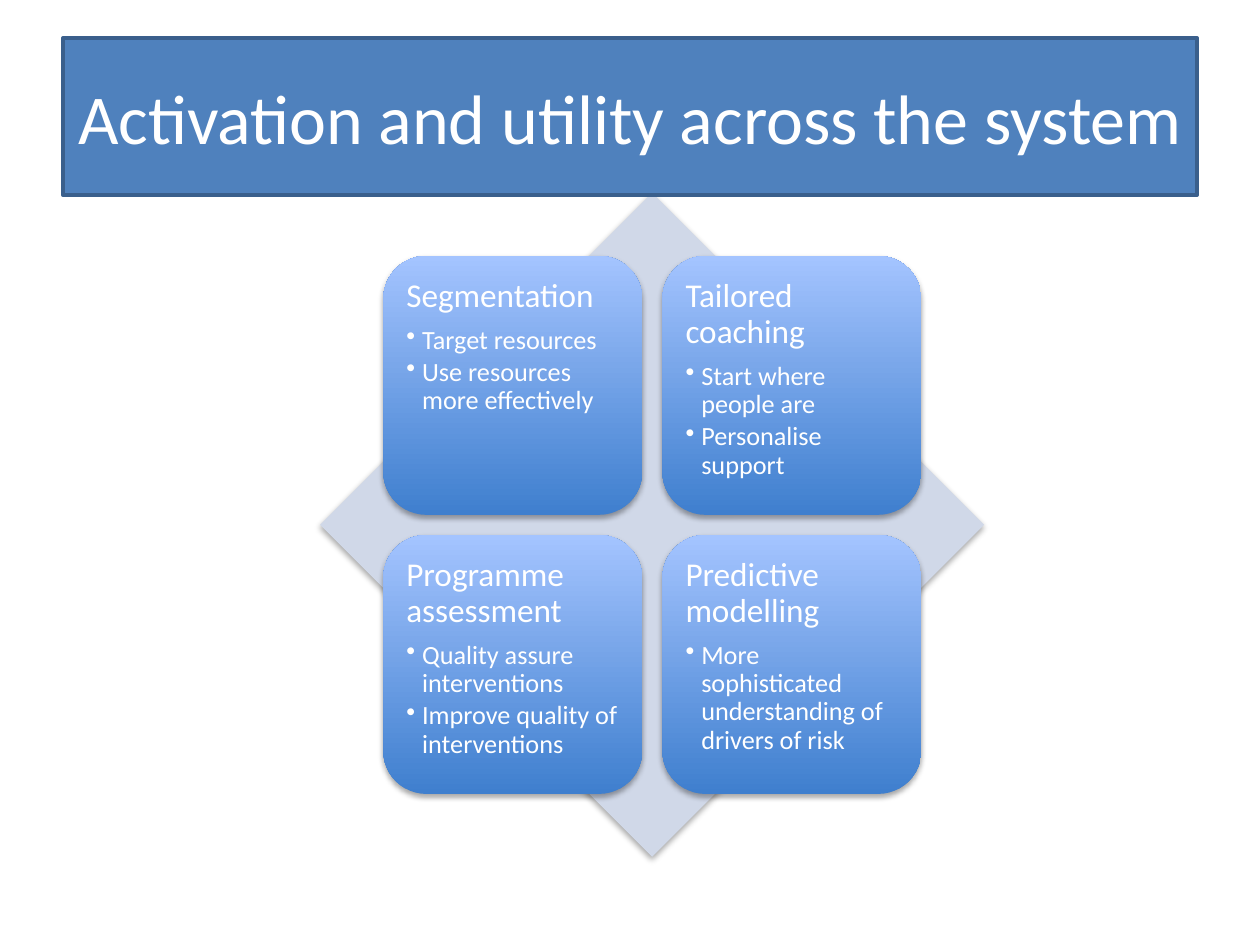
from lxml.etree import SubElement
from pptx import Presentation
from pptx.dml.color import RGBColor
from pptx.enum.shapes import MSO_SHAPE as Preset
from pptx.enum.text import MSO_ANCHOR as Anchor, PP_ALIGN as Align
from pptx.oxml.ns import qn
from pptx.util import Pt


def color(hex_text):
    return RGBColor.from_string(hex_text)


def add_text(paragraph, text, size=15, font="Calibri", ink="FFFFFF",
             align=Align.LEFT, line=None, after=0, bullet=False):
    paragraph.alignment = align
    paragraph.line_spacing = line
    paragraph.space_after = Pt(after)
    run = paragraph.add_run()
    run.text = text
    run.font.size = Pt(size)
    run.font.name = font
    run.font.color.rgb = color(ink)
    if bullet:
        paragraph.level = 1
        properties = paragraph._p.get_or_add_pPr()
        properties.set("marL", str(Pt(9)))
        properties.set("indent", str(-Pt(9)))
        SubElement(properties, qn("a:buChar"), char="•")


class SlideBuilder:
    banner_fill, banner_line = "4F81BD", "3A5F8C"
    diamond_fill = "D0D8E8"
    card_bottom, card_top = "3F7FCE", "A4C4FF"

    def __init__(self, slide):
        self.slide = slide

    def shape(self, preset, left, top, width, height):
        shape = self.slide.shapes.add_shape(
            preset, Pt(left), Pt(top), Pt(width), Pt(height))
        shape.shadow.inherit = False
        shape.line.fill.background()
        return shape

    def soft_shadow(self, shape):
        effects = shape._element.spPr.find(qn("a:effectLst"))
        shadow = SubElement(
            effects, qn("a:outerShdw"), blurRad=str(Pt(3.1)),
            dist=str(Pt(1.8)), dir="5400000", rotWithShape="0")
        shade = SubElement(shadow, qn("a:srgbClr"), val="000000")
        SubElement(shade, qn("a:alpha"), val="35000")

    def diamond(self, left, top, size):
        shape = self.shape(Preset.DIAMOND, left, top, size, size)
        shape.fill.solid()
        shape.fill.fore_color.rgb = color(self.diamond_fill)
        self.soft_shadow(shape)

    def card(self, left, top, size, heading, points):
        shape = self.shape(Preset.ROUNDED_RECTANGLE, left, top, size, size)
        shape.fill.gradient()
        shape.fill.gradient_angle = 90
        for stop, shade in zip(shape.fill.gradient_stops,
                               (self.card_bottom, self.card_top)):
            stop.color.rgb = color(shade)
        self.soft_shadow(shape)

        # Text sits inside the rounded corners
        margin = 7.2
        side = Pt(size - 2 * margin)
        box = self.slide.shapes.add_textbox(
            Pt(left + margin), Pt(top + margin), side, side)
        frame = box.text_frame
        frame.word_wrap = True
        frame.margin_left = frame.margin_right = Pt(6)
        frame.margin_top = frame.margin_bottom = Pt(6)
        add_text(frame.paragraphs[0], heading, size=19, line=0.9, after=6.65)
        for point in points:
            add_text(frame.add_paragraph(), point, line=0.9, after=2.25,
                     bullet=True)

    def banner(self, left, top, width, height, title):
        shape = self.shape(Preset.RECTANGLE, left, top, width, height)
        shape.fill.solid()
        shape.fill.fore_color.rgb = color(self.banner_fill)
        shape.line.color.rgb = color(self.banner_line)
        shape.line.width = Pt(2)
        frame = shape.text_frame
        frame.word_wrap = True
        frame.vertical_anchor = Anchor.MIDDLE
        add_text(frame.paragraphs[0], title, size=40, align=Align.CENTER)


CARDS = [
    ("Segmentation", ["Target resources", "Use resources more effectively"]),
    ("Tailored coaching", ["Start where people are", "Personalise support"]),
    ("Programme assessment", ["Quality assure interventions",
                              "Improve quality of interventions"]),
    ("Predictive modelling",
     ["More sophisticated understanding of drivers of risk"]),
]


def main():
    presentation = Presentation()
    presentation.slide_width, presentation.slide_height = Pt(720), Pt(540)
    slide = presentation.slides.add_slide(presentation.slide_layouts[6])
    builder = SlideBuilder(slide)

    # Diamond behind a two by two grid of cards
    builder.diamond(183, 110.2, 379.4)
    card_size, pitch = 148, 159.5
    for index, (heading, points) in enumerate(CARDS):
        row, column = divmod(index, 2)
        builder.card(219 + column * pitch, 146.2 + row * pitch, card_size,
                     heading, points)

    # Title banner
    builder.banner(36, 21.6, 648, 90,
                   "Activation and utility across the system")

    presentation.save("out.pptx")


if __name__ == "__main__":
    main()
